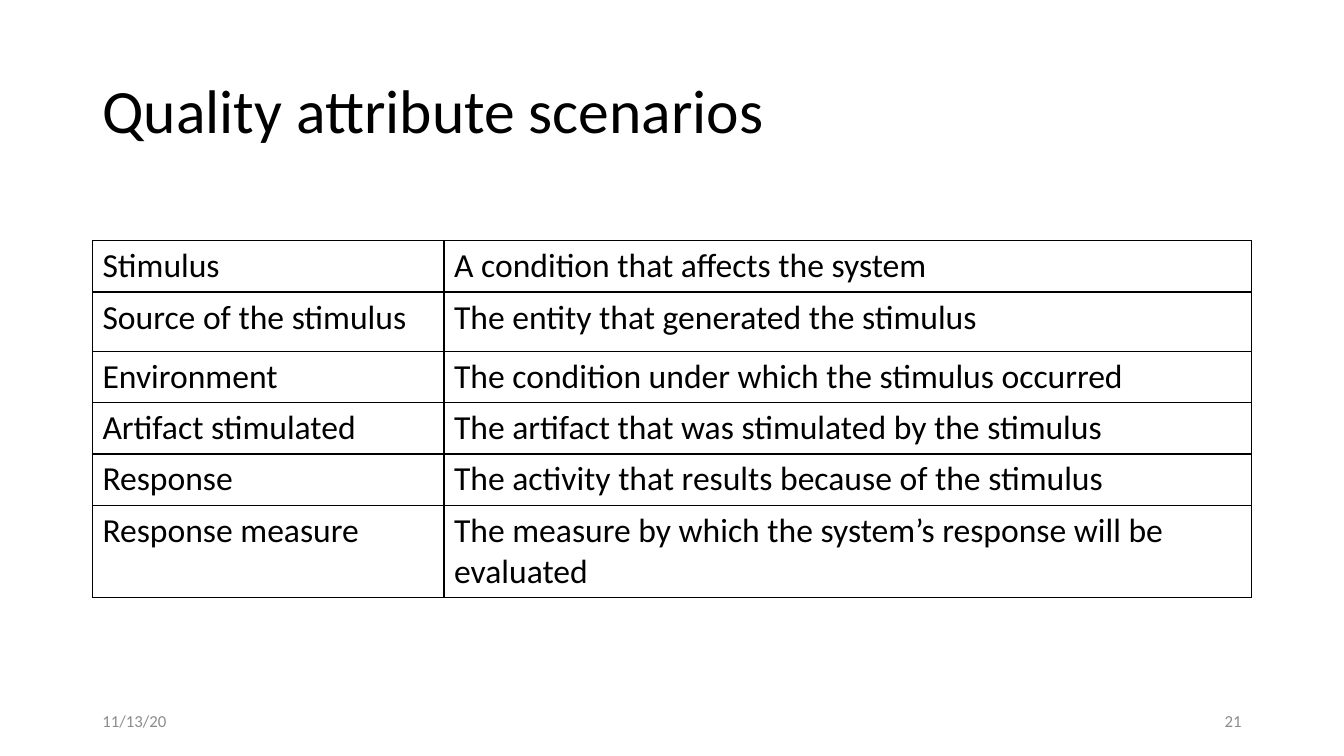
from dataclasses import dataclass

import pptx
import pptx.dml.color
import pptx.enum.text
import pptx.oxml
import pptx.oxml.ns
import pptx.util
from pptx.util import Cm

RGBColor = pptx.dml.color.RGBColor
ALIGN = pptx.enum.text.PP_ALIGN
MIDDLE = pptx.enum.text.MSO_ANCHOR.MIDDLE

BLACK = RGBColor(0x00, 0x00, 0x00)
GRAY = RGBColor(0x8C, 0x8C, 0x8C)
FONT = "Calibri"
LEFT = 2.33
COLUMN_WIDTHS = (8.86, 20.35)


@dataclass
class Part:
    name: str
    meaning: str
    height: float = 1.29


PARTS = [
    Part("Stimulus", "A condition that affects the system"),
    Part("Source of the stimulus", "The entity that generated the stimulus", 1.5),
    Part("Environment", "The condition under which the stimulus occurred"),
    Part("Artifact stimulated", "The artifact that was stimulated by the stimulus"),
    Part("Response", "The activity that results because of the stimulus"),
    Part("Response measure",
         "The measure by which the system’s response will be evaluated", 2.32),
]


def write(tf, text: str, *, size: float, color: RGBColor = BLACK,
          align=ALIGN.LEFT, spacing: float = 1.0) -> None:
    p = tf.paragraphs[0]
    p.alignment = align
    p.line_spacing = spacing
    r = p.add_run()
    r.text = text
    r.font.name = FONT
    r.font.size = pptx.util.Pt(size)
    r.font.color.rgb = color


def add_text(slide, text: str, left: float, top: float, width: float,
             height: float, **text_format) -> None:
    sp = slide.shapes.add_textbox(Cm(left), Cm(top), Cm(width), Cm(height))
    tf = sp.text_frame
    tf.word_wrap = True
    tf.vertical_anchor = MIDDLE
    write(tf, text, **text_format)


def set_borders(cell, color: RGBColor, width: float) -> None:
    tc_pr = cell._tc.get_or_add_tcPr()
    for i, side in enumerate(("lnL", "lnR", "lnT", "lnB")):
        ln = pptx.oxml.parse_xml(
            f'<a:{side} {pptx.oxml.ns.nsdecls("a")} w="{pptx.util.Pt(width)}">'
            f'<a:solidFill><a:srgbClr val="{color}"/></a:solidFill></a:{side}>')
        tc_pr.insert(i, ln)


def add_parts_table(slide, parts: list[Part], top: float) -> None:
    frame = slide.shapes.add_table(
        len(parts), len(COLUMN_WIDTHS), Cm(LEFT), Cm(top),
        Cm(sum(COLUMN_WIDTHS)), Cm(sum(part.height for part in parts)))
    table = frame.table
    table.first_row = False
    table.horz_banding = False
    for column, width in zip(table.columns, COLUMN_WIDTHS):
        column.width = Cm(width)
    for row, part in zip(table.rows, parts):
        row.height = Cm(part.height)
        for cell, text in zip(row.cells, (part.name, part.meaning)):
            cell.fill.background()
            set_borders(cell, BLACK, 1)
            write(cell.text_frame, text, size=24)


def main() -> None:
    prs = pptx.Presentation()
    prs.slide_width, prs.slide_height = Cm(33.87), Cm(19.05)
    slide = prs.slides.add_slide(prs.slide_layouts[6])

    # Title
    add_text(slide, "Quality attribute scenarios", LEFT, 1.01, 29.21, 3.68,
             size=44, spacing=0.9)

    # Scenario parts
    add_parts_table(slide, PARTS, top=6.07)

    # Footer: date and slide number
    add_text(slide, "11/13/20", LEFT, 17.66, 7.62, 1.01, size=12, color=GRAY)
    add_text(slide, "21", 23.92, 17.66, 7.62, 1.01, size=12, color=GRAY,
             align=ALIGN.RIGHT)

    prs.save("out.pptx")


if __name__ == "__main__":
    main()
